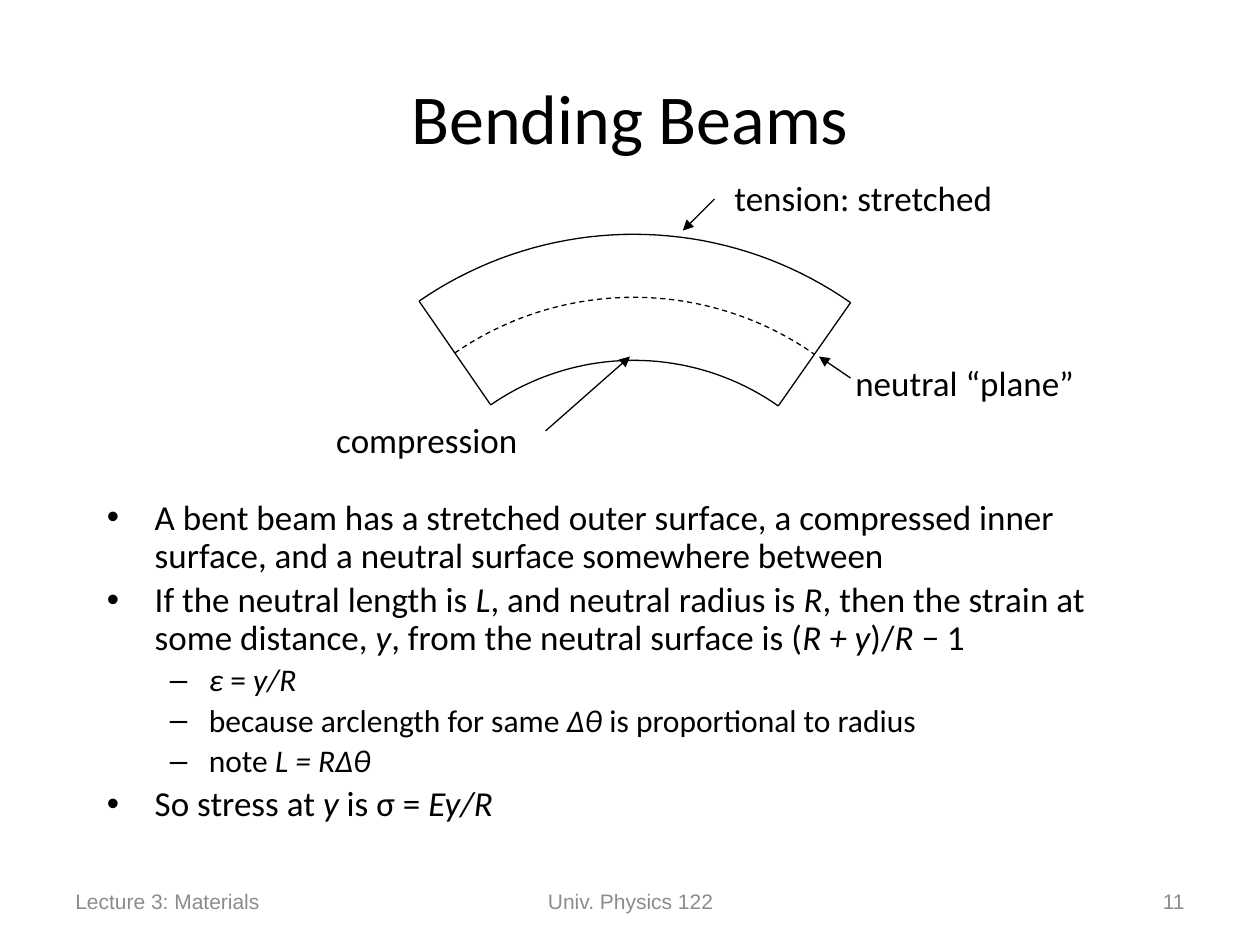
from math import cos, radians, sin

from lxml import etree
from pptx import Presentation
from pptx.dml.color import RGBColor
from pptx.enum.dml import MSO_LINE
from pptx.enum.shapes import MSO_CONNECTOR
from pptx.enum.text import MSO_ANCHOR as ANCHOR, MSO_AUTO_SIZE as AUTO_SIZE, PP_ALIGN as ALIGN
from pptx.oxml.ns import qn
from pptx.util import Emu, Pt

EMU_PER_PX = 9144  # 100 px to the inch
BLACK = RGBColor(0x00, 0x00, 0x00)
GREY = RGBColor(0x8C, 0x8C, 0x8C)

BEAM_CENTER = (503, 486)
BEAM_START, BEAM_END = 235.4, 305
OUTER_RADIUS, NEUTRAL_RADIUS, INNER_RADIUS = 300, 250, 200

# Asterisks enclose italic text.
BULLETS = [
    (0, "A bent beam has a stretched outer surface, a compressed inner surface, "
        "and a neutral surface somewhere between"),
    (0, "If the neutral length is *L*, and neutral radius is *R*, then the strain at "
        "some distance, *y*, from the neutral surface is (*R + y*)/*R −* 1"),
    (1, "*ε* = *y/R*"),
    (1, "because arclength for same *Δθ* is proportional to radius"),
    (1, "note *L = RΔθ*"),
    (0, "So stress at *y* is σ = *Ey/R*"),
]
# Per level: bullet, font size, left margin, hanging indent
LEVELS = [("•", 20, 38, 38), ("–", 18, 81, 31)]

LABELS = [
    ("tension: stretched", (573, 135, 239, 43), (567, 158), (542, 183)),
    ("compression", (257, 327, 178, 43), (433, 342), (500, 283)),
    ("neutral “plane”", (669, 282, 199, 43), (675, 300), (650, 283)),
]
FOOTERS = [
    ("Lecture 3: Materials", (50, 695, 233, 40), ALIGN.LEFT),
    ("Univ. Physics 122", (342, 695, 317, 40), ALIGN.CENTER),
    ("11", (717, 695, 233, 40), ALIGN.RIGHT),
]


def px(length):
    return Emu(round(length * EMU_PER_PX))


def beam_point(radius, angle):
    """Point on the beam; angles run clockwise from the right, in degrees."""
    x, y = BEAM_CENTER
    return x + radius * cos(radians(angle)), y + radius * sin(radians(angle))


class SlideBuilder:
    """Draws elements on one slide in a shared style."""

    def __init__(self, slide, font="Calibri", line_width=0.75):
        self.slide = slide
        self.font = font
        self.line_width = Pt(line_width)

    def style_font(self, font, size, color=BLACK, name=None):
        font.name = name or self.font
        font.size = Pt(size)
        font.color.rgb = color

    def style_line(self, line):
        line.color.rgb = BLACK
        line.width = self.line_width

    def title(self, text, box):
        shape = self.slide.shapes.title
        shape.left, shape.top, shape.width, shape.height = map(px, box)
        shape.text_frame.text = text
        shape.text_frame.vertical_anchor = ANCHOR.MIDDLE
        paragraph = shape.text_frame.paragraphs[0]
        paragraph.alignment = ALIGN.CENTER
        self.style_font(paragraph.runs[0].font, 40)

    def text(self, text, box, size=20, color=BLACK, name=None, align=ALIGN.LEFT,
             anchor=ANCHOR.TOP, wrap=True):
        frame = self.slide.shapes.add_textbox(*map(px, box)).text_frame
        frame.text = text
        frame.word_wrap = wrap
        frame.vertical_anchor = anchor
        if not wrap:
            frame.auto_size = AUTO_SIZE.SHAPE_TO_FIT_TEXT
        paragraph = frame.paragraphs[0]
        paragraph.alignment = align
        self.style_font(paragraph.runs[0].font, size, color, name)

    def bullets(self, items, box):
        frame = self.slide.shapes.add_textbox(*map(px, box)).text_frame
        frame.word_wrap = True
        for index, (level, text) in enumerate(items):
            paragraph = frame.add_paragraph() if index else frame.paragraphs[0]
            bullet, size, margin, hanging = LEVELS[level]
            paragraph.level = level
            paragraph.line_spacing = 0.9
            paragraph.space_before = Pt(size * 0.2)
            properties = paragraph._p.get_or_add_pPr()
            properties.set("marL", str(px(margin)))
            properties.set("indent", str(px(-hanging)))
            etree.SubElement(properties, qn("a:buFont")).set("typeface", "Arial")
            etree.SubElement(properties, qn("a:buChar")).set("char", bullet)
            for part, words in enumerate(text.split("*")):
                if words:
                    run = paragraph.add_run()
                    run.text = words
                    self.style_font(run.font, size)
                    run.font.italic = part % 2 == 1

    def arc(self, radius, dash=None, steps=40):
        step = (BEAM_END - BEAM_START) / steps
        points = [tuple(map(px, beam_point(radius, BEAM_START + step * i)))
                  for i in range(steps + 1)]
        builder = self.slide.shapes.build_freeform(*points[0])
        builder.add_line_segments(points[1:], close=False)
        shape = builder.convert_to_shape()
        shape.shadow.inherit = False
        shape.fill.background()
        self.style_line(shape.line)
        if dash:
            shape.line.dash_style = dash

    def line(self, start, end, arrow=False):
        connector = self.slide.shapes.add_connector(
            MSO_CONNECTOR.STRAIGHT, *map(px, (*start, *end)))
        self.style_line(connector.line)
        if arrow:
            outline = connector.line._get_or_add_ln()
            etree.SubElement(outline, qn("a:tailEnd")).set("type", "triangle")
        etree.SubElement(connector._element.spPr, qn("a:effectLst"))


def main():
    presentation = Presentation()
    presentation.slide_width, presentation.slide_height = px(1000), px(750)
    slide = presentation.slides.add_slide(presentation.slide_layouts[5])
    builder = SlideBuilder(slide)

    for text, box, align in FOOTERS:
        builder.text(text, box, 12, GREY, "Arial", align, ANCHOR.MIDDLE)
    builder.title("Bending Beams", (50, 30, 900, 125))
    builder.bullets(BULLETS, (75, 392, 850, 292))

    builder.arc(NEUTRAL_RADIUS, MSO_LINE.DASH)
    for radius in (OUTER_RADIUS, INNER_RADIUS):
        builder.arc(radius)
    for angle in (BEAM_START, BEAM_END):
        builder.line(beam_point(OUTER_RADIUS, angle), beam_point(INNER_RADIUS, angle))

    for text, box, start, end in LABELS:
        builder.text(text, box, wrap=False)
        builder.line(start, end, arrow=True)

    presentation.save("out.pptx")


if __name__ == "__main__":
    main()
